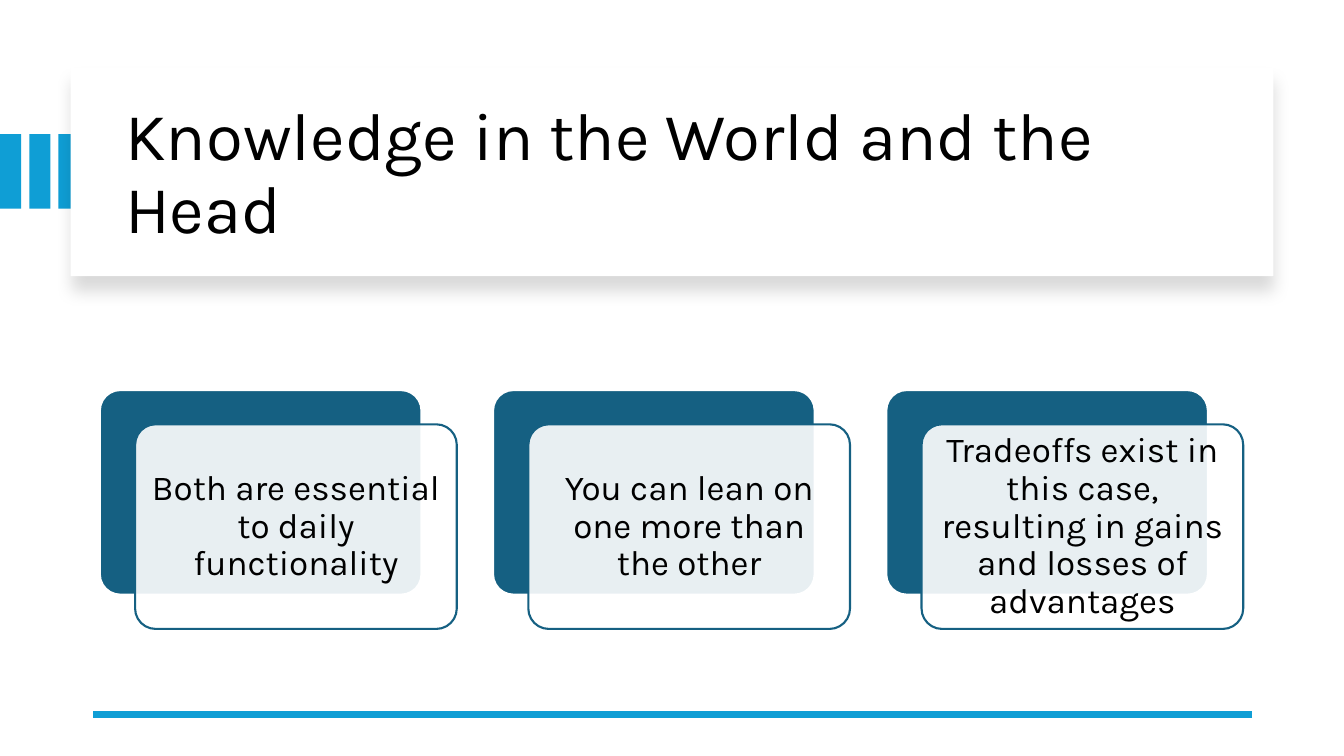
from lxml.etree import SubElement
from pptx import Presentation
from pptx.dml.color import RGBColor
from pptx.enum.shapes import MSO_CONNECTOR, MSO_SHAPE
from pptx.enum.text import MSO_ANCHOR, MSO_AUTO_SIZE, PP_ALIGN
from pptx.oxml import parse_xml
from pptx.oxml.ns import nsdecls, qn
from pptx.util import Pt

EMU_PER_PX = 9144
FONT = "Karla"
BLACK = RGBColor(0x00, 0x00, 0x00)
WHITE = RGBColor(0xFF, 0xFF, 0xFF)
BRIGHT_BLUE = RGBColor(0x0F, 0x9E, 0xD5)
DEEP_BLUE = RGBColor(0x15, 0x60, 0x82)

TITLE = "Knowledge in the World and the Head"
CARDS = [
    "Both are essential to daily functionality",
    "You can lean on one more than the other",
    "Tradeoffs exist in this case, resulting in gains and losses of advantages",
]


def px(*lengths):
    """Turn px lengths into EMU."""
    return [length * EMU_PER_PX for length in lengths]


def add_block(slide, kind, box, fill, line=None):
    """Add a filled preset shape without shadow, outlined if a line colour is given."""
    shape = slide.shapes.add_shape(kind, *px(*box))
    shape.shadow.inherit = False
    shape.fill.solid()
    shape.fill.fore_color.rgb = fill
    if line is None:
        shape.line.fill.background()
    else:
        shape.line.color.rgb = line
        shape.line.width = Pt(1.5)
    return shape


def write_text(shape, text, size, alignment):
    """Put one middle-anchored paragraph into a shape."""
    frame = shape.text_frame
    frame.word_wrap = True
    frame.auto_size = MSO_AUTO_SIZE.NONE
    frame.vertical_anchor = MSO_ANCHOR.MIDDLE
    frame.text = text
    paragraph = frame.paragraphs[0]
    paragraph.alignment = alignment
    paragraph.line_spacing = 0.9
    paragraph.font.name = FONT
    paragraph.font.size = Pt(size)
    paragraph.font.color.rgb = BLACK


def add_stripes(slide, left, top, width, height):
    """Draw three equal stripes across the box."""
    stripe = 21
    step = (width - stripe) // 2
    for index in range(3):
        box = (left + index * step, top, stripe, height)
        add_block(slide, MSO_SHAPE.RECTANGLE, box, BRIGHT_BLUE)


def add_title_panel(slide, left, top, width, height):
    """Draw the shadowed white panel and set the title on it."""
    panel = add_block(slide, MSO_SHAPE.RECTANGLE, (left, top, width, height), WHITE)
    properties = panel.element.spPr
    properties.remove(properties.find(qn("a:effectLst")))
    properties.append(parse_xml(
        f'<a:effectLst {nsdecls("a")}>'
        f'<a:outerShdw blurRad="{Pt(11)}" dist="{Pt(10)}" dir="5400000" '
        'algn="t" rotWithShape="0"><a:srgbClr val="000000">'
        '<a:alpha val="15000"/></a:srgbClr></a:outerShdw></a:effectLst>'))
    title = slide.shapes.title
    title.left, title.top, title.width, title.height = px(
        left + 44, top + 22, width - 80, height - 37)
    write_text(title, TITLE, 48, PP_ALIGN.LEFT)
    panel.element.addnext(title.element)


def add_rule(slide, left, top, width):
    """Draw the thick horizontal rule."""
    rule = slide.shapes.add_connector(
        MSO_CONNECTOR.STRAIGHT, *px(left + width, top, left, top))
    rule.line.color.rgb = BRIGHT_BLUE
    rule.line.width = Pt(4.5)
    SubElement(rule.element.spPr, qn("a:effectLst"))


def add_card(slide, left, top, width, height, text):
    """Draw a dark plate with a translucent text plate offset over it."""
    shift_x, shift_y, inset = 35, 34, 6
    plate_width, plate_height = width - shift_x, height - shift_y
    back = add_block(slide, MSO_SHAPE.ROUNDED_RECTANGLE,
                     (left, top, plate_width, plate_height), DEEP_BLUE, WHITE)
    front = add_block(slide, MSO_SHAPE.ROUNDED_RECTANGLE,
                      (left + shift_x, top + shift_y, plate_width, plate_height),
                      WHITE, DEEP_BLUE)
    for plate in (back, front):
        plate.adjustments[0] = 0.1
    color = front.element.spPr.find(qn("a:solidFill")).find(qn("a:srgbClr"))
    SubElement(color, qn("a:alpha"), val="90000")
    label = slide.shapes.add_textbox(*px(
        left + shift_x + inset, top + shift_y + inset,
        plate_width - 2 * inset, plate_height - 2 * inset))
    write_text(label, text, 25, PP_ALIGN.CENTER)
    frame = label.text_frame
    frame.margin_left, frame.margin_top, frame.margin_right, frame.margin_bottom = px(
        10, 10, 10, 10)


def add_cards(slide, left, top, width, height):
    """Spread the cards evenly over the box."""
    card_width = 354
    step = (width - card_width) // (len(CARDS) - 1)
    for index, text in enumerate(CARDS):
        add_card(slide, left + index * step, top, card_width, height, text)


def main():
    """Build the slide and save it."""
    presentation = Presentation()
    presentation.slide_width, presentation.slide_height = px(1333, 750)
    slide = presentation.slides.add_slide(presentation.slide_layouts[5])
    add_stripes(slide, 0, 133, 80, 74)
    add_title_panel(slide, 70, 67, 1193, 207)
    add_rule(slide, 92, 709, 1150)
    add_cards(slide, 99, 387, 1135, 237)
    presentation.save("out.pptx")


if __name__ == "__main__":
    main()
